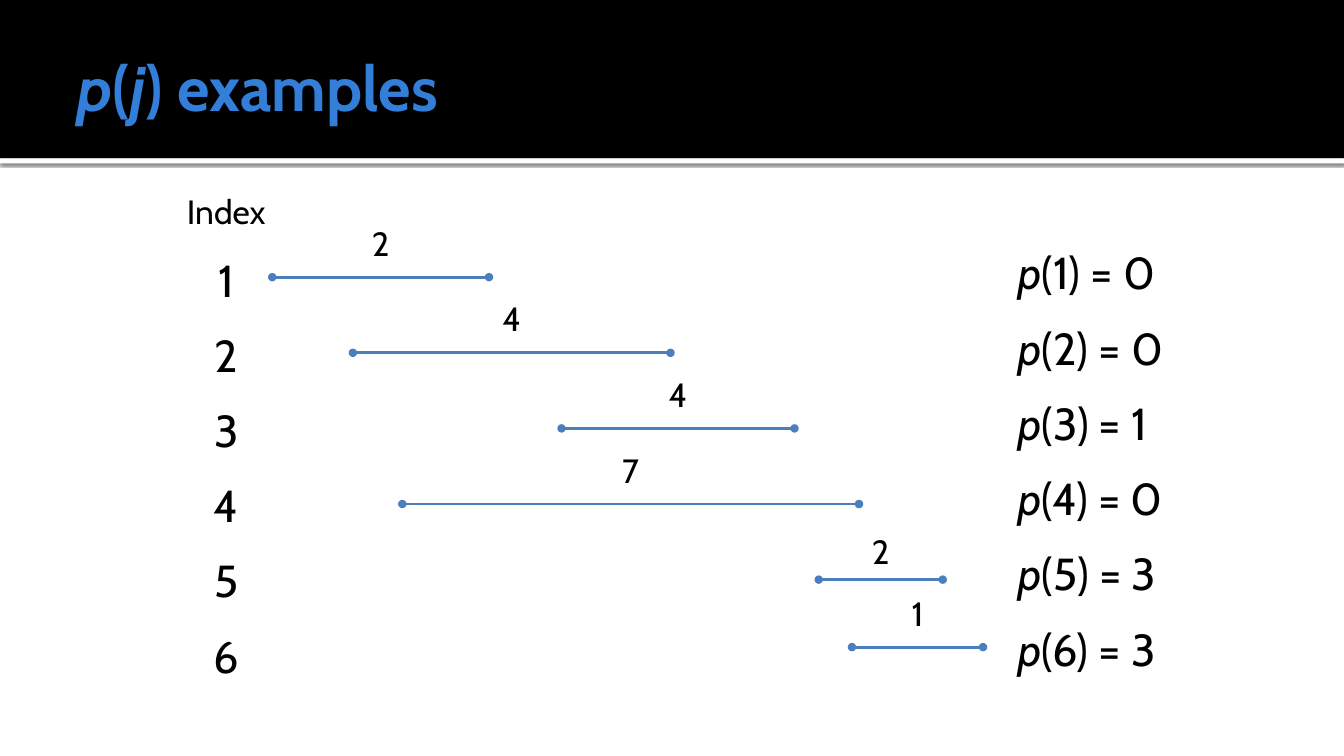
from dataclasses import dataclass

from lxml.etree import SubElement
from pptx import Presentation
from pptx.dml.color import RGBColor as Color
from pptx.enum.shapes import MSO_CONNECTOR as Connector, MSO_SHAPE as Shape
from pptx.enum.text import MSO_ANCHOR as Anchor, MSO_AUTO_SIZE as AutoSize, PP_ALIGN as Align
from pptx.oxml.ns import qn
from pptx.slide import Slide
from pptx.text.text import TextFrame, _Paragraph as Paragraph
from pptx.util import Inches, Pt


@dataclass(frozen=True)
class Theme:
    font: str = "Cabin"
    title_color: str = "337ED9"
    text_color: str = "000000"
    band_color: str = "000000"
    strip_color: str = "FFFFFF"
    line_color: str = "4B7EBC"
    title_size: int = 45
    row_size: int = 32
    label_size: int = 24
    line_width: int = 2
    row_spacing: float = 1.4


@dataclass(frozen=True)
class Interval:
    start: float
    end: float
    y: float
    weight: int
    predecessor: int
    label_rise: float = 0.59


THEME = Theme()
FIRST_Y, ROW_STEP = 2.75, 0.75
LABEL_WIDTH, LABEL_HEIGHT = 0.67, 0.5
INTERVALS = [
    Interval(2.7, 4.85, FIRST_Y, 2, 0),
    Interval(3.5, 6.65, FIRST_Y + ROW_STEP, 4, 0),
    Interval(5.57, 7.88, FIRST_Y + 2 * ROW_STEP, 4, 1),
    Interval(3.99, 8.52, FIRST_Y + 3 * ROW_STEP, 7, 0),
    Interval(8.12, 9.35, FIRST_Y + 4 * ROW_STEP, 2, 3, label_rise=0.53),
    Interval(8.45, 9.75, 6.42, 1, 3),
]


def add_span(para: Paragraph, text: str, size: int, color: str = THEME.text_color, **extra: bool) -> None:
    span = para.add_run()
    span.text = text
    font_format = {"name": THEME.font, "size": Pt(size), **extra}
    for name, value in font_format.items():
        setattr(span.font, name, value)
    span.font.color.rgb = Color.from_string(color)


def add_bar(page: Slide, top: float, height: float, color: str, shadow: bool = False) -> None:
    bar = page.shapes.add_shape(Shape.RECTANGLE, 0, Inches(top), Inches(13.33), Inches(height))
    bar.fill.solid()
    bar.fill.fore_color.rgb = Color.from_string(color)
    bar.line.fill.background()
    bar.shadow.inherit = False
    if shadow:
        effects = bar.element.spPr.find(qn("a:effectLst"))
        outer = SubElement(effects, qn("a:outerShdw"), blurRad=str(Pt(2.5)),
                           dist=str(Pt(0.8)), dir="5400000", rotWithShape="0")
        shade = SubElement(outer, qn("a:srgbClr"), val="000000")
        SubElement(shade, qn("a:alpha"), val="60000")


def add_box(page: Slide, left: float, top: float, width: float, height: float) -> TextFrame:
    box = page.shapes.add_textbox(*map(Inches, (left, top, width, height)))
    frame = box.text_frame
    frame.word_wrap = True
    frame.auto_size = AutoSize.SHAPE_TO_FIT_TEXT
    return frame


def add_interval(page: Slide, item: Interval) -> None:
    ends = map(Inches, (item.start, item.y, item.end, item.y))
    line = page.shapes.add_connector(Connector.STRAIGHT, *ends)
    line.line.color.rgb = Color.from_string(THEME.line_color)
    line.line.width = Pt(THEME.line_width)
    outline = line.line._get_or_add_ln()
    for tag in ("a:headEnd", "a:tailEnd"):
        SubElement(outline, qn(tag), type="oval")
    SubElement(line.element.spPr, qn("a:effectLst"))


def add_weight(page: Slide, item: Interval) -> None:
    left = (item.start + item.end - LABEL_WIDTH) / 2
    frame = add_box(page, left, item.y - item.label_rise, LABEL_WIDTH, LABEL_HEIGHT)
    para = frame.paragraphs[0]
    para.alignment = Align.CENTER
    add_span(para, str(item.weight), THEME.label_size)


def format_title(page: Slide) -> None:
    title = page.shapes.title
    place = {"left": 0.67, "top": 0.17, "width": 12, "height": 1.37}
    for name, value in place.items():
        setattr(title, name, Inches(value))
    frame_format = {"vertical_anchor": Anchor.MIDDLE, "auto_size": AutoSize.NONE,
                    "word_wrap": True, "margin_left": Inches(0.1), "margin_right": Inches(0.05),
                    "margin_top": Inches(0.05), "margin_bottom": Inches(0.05)}
    for name, value in frame_format.items():
        setattr(title.text_frame, name, value)
    para = title.text_frame.paragraphs[0]
    para.alignment = Align.LEFT
    for text, italic in (("p", True), ("(", False), ("j", True), (") examples", False)):
        add_span(para, text, THEME.title_size, THEME.title_color, bold=True, italic=italic)
    # Bring the title in front of the header band
    title.element.getparent().append(title.element)


def add_index_column(page: Slide) -> None:
    frame = add_box(page, 1.58, 1.84, 1.33, 4.96)
    heading = frame.paragraphs[0]
    heading.alignment = Align.CENTER
    add_span(heading, "Index", THEME.label_size)
    for index in range(1, len(INTERVALS) + 1):
        para = frame.add_paragraph()
        para.alignment = Align.CENTER
        para.line_spacing = THEME.row_spacing
        add_span(para, str(index), THEME.row_size)


def add_predecessor_column(page: Slide) -> None:
    frame = add_box(page, 10, 2.17, 1.75, 4.62)
    for index, item in enumerate(INTERVALS, start=1):
        para = frame.paragraphs[0] if index == 1 else frame.add_paragraph()
        para.line_spacing = THEME.row_spacing
        add_span(para, "p", THEME.row_size, italic=True)
        add_span(para, f"({index}) = {item.predecessor}", THEME.row_size, italic=False)


def main() -> None:
    deck = Presentation()
    deck.slide_width, deck.slide_height = Inches(13.33), Inches(7.5)
    page = deck.slides.add_slide(deck.slide_layouts[5])

    # Header
    add_bar(page, 1.57, 0.05, THEME.strip_color, shadow=True)
    add_bar(page, 0, 1.57, THEME.band_color)
    format_title(page)

    # Intervals, side columns and weights
    for item in INTERVALS:
        add_interval(page, item)
    add_index_column(page)
    add_predecessor_column(page)
    for item in INTERVALS:
        add_weight(page, item)

    deck.save("out.pptx")


if __name__ == "__main__":
    main()
